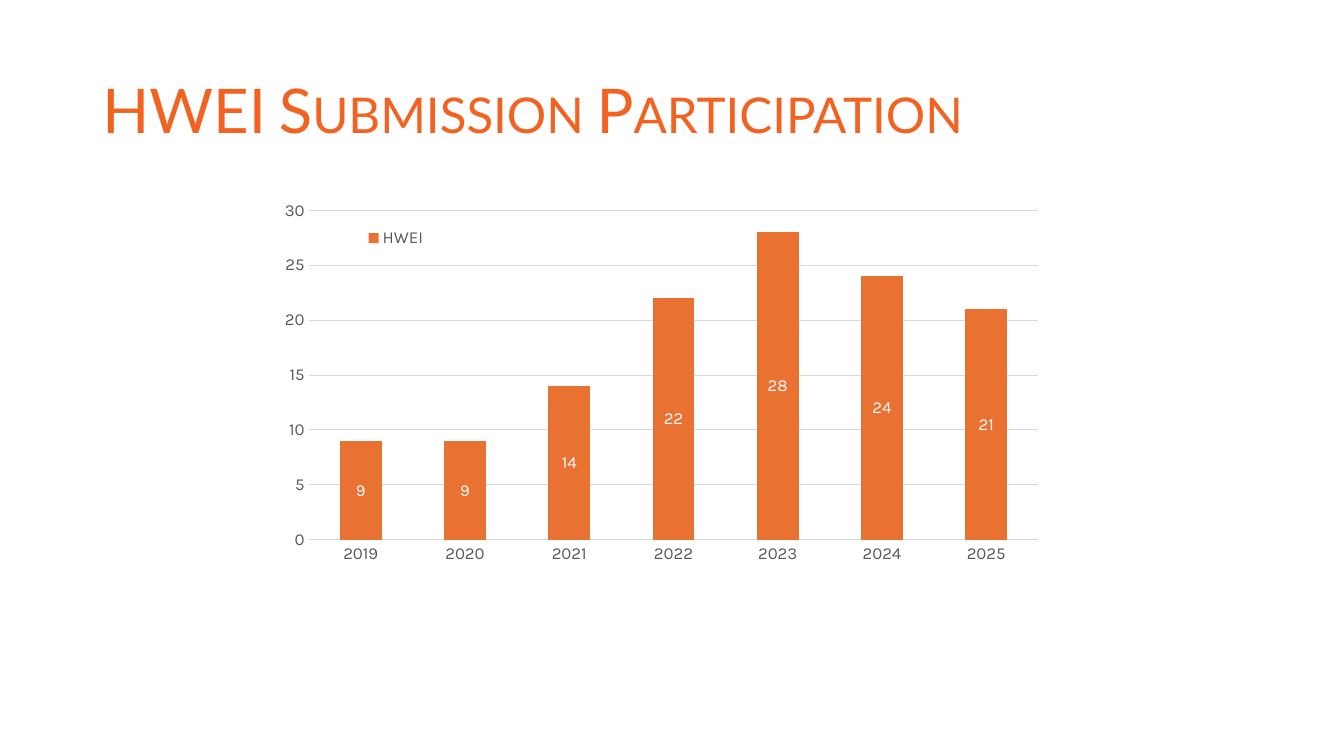
from dataclasses import dataclass

from lxml.etree import SubElement
from pptx import Presentation
from pptx.chart.data import CategoryChartData
from pptx.dml.color import RGBColor
from pptx.enum.chart import (XL_CHART_TYPE, XL_LABEL_POSITION,
                             XL_LEGEND_POSITION, XL_TICK_MARK)
from pptx.enum.text import MSO_ANCHOR, MSO_AUTO_SIZE, PP_ALIGN
from pptx.oxml.ns import qn
from pptx.util import Pt


@dataclass(frozen=True)
class Theme:
    title: str = "F26322"
    bar: str = "E97132"
    text: str = "595959"
    grid: str = "D9D9D9"
    white: str = "FFFFFF"
    head: str = "Lato"
    body: str = "Karla"
    big: int = 44
    small: int = 12


THEME = Theme()
COUNTS = {"2019": 9, "2020": 9, "2021": 14, "2022": 22,
          "2023": 28, "2024": 24, "2025": 21}


def style(font, size=THEME.small, color=THEME.text, name=THEME.body):
    font.size = Pt(size)
    font.name = name
    font.bold = False
    font.color.rgb = RGBColor.from_string(color)


def write(frame, text, align=PP_ALIGN.LEFT, space=1.0, caps=None, **form):
    para = frame.paragraphs[0]
    para.alignment = align
    para.line_spacing = space
    run = para.add_run()
    run.text = text
    style(run.font, **form)
    if caps:
        run._r.get_or_add_rPr().set("cap", caps)


def place(shape, left, top, width, height):
    shape.left, shape.top = Pt(left), Pt(top)
    shape.width, shape.height = Pt(width), Pt(height)


def rule(line):
    line.color.rgb = RGBColor.from_string(THEME.grid)
    line.width = Pt(0.75)


def lay_out(part, index, x, y, w, h, inner=False):
    """Fix a chart part at fractions of the chart area."""
    for old in part.findall(qn("c:layout")):
        part.remove(old)
    layout = part.makeelement(qn("c:layout"))
    part.insert(index, layout)
    manual = SubElement(layout, qn("c:manualLayout"))
    items = [("layoutTarget", "inner")] if inner else []
    items += [("xMode", "edge"), ("yMode", "edge"),
              ("x", x), ("y", y), ("w", w), ("h", h)]
    for tag, val in items:
        SubElement(manual, qn(f"c:{tag}")).set("val", str(val))


def add_title(slide, text):
    title = slide.shapes.title
    place(title, 66, 28.75, 828, 104.4)
    frame = title.text_frame
    frame.word_wrap = True
    frame.auto_size = MSO_AUTO_SIZE.NONE
    frame.vertical_anchor = MSO_ANCHOR.MIDDLE
    write(frame, text, space=0.9, caps="small", size=THEME.big,
          color=THEME.title, name=THEME.head)


def set_axes(chart):
    years, scale = chart.category_axis, chart.value_axis
    for axis in (years, scale):
        axis.major_tick_mark = axis.minor_tick_mark = XL_TICK_MARK.NONE
        style(axis.tick_labels.font)
    rule(years.format.line)
    scale.format.line.fill.background()
    scale.minimum_scale, scale.maximum_scale, scale.major_unit = 0, 30, 5
    scale.has_major_gridlines = True
    rule(scale.major_gridlines.format.line)
    scale.tick_labels.number_format = "0"
    scale.tick_labels.number_format_is_linked = False


def set_bars(plot):
    plot.gap_width, plot.overlap = 150, 100
    plot.vary_by_categories = False
    series = plot.series[0]
    series.format.fill.solid()
    series.format.fill.fore_color.rgb = RGBColor.from_string(THEME.bar)
    labels = series.data_labels
    labels.show_value = True
    labels.position = XL_LABEL_POSITION.CENTER
    style(labels.font, color=THEME.white)


def add_bars(slide, name, counts):
    data = CategoryChartData(number_format="0")
    data.categories = list(counts)
    data.add_series(name, list(counts.values()))
    chart = slide.shapes.add_chart(
        XL_CHART_TYPE.COLUMN_STACKED, Pt(186.5), Pt(133.2),
        Pt(566.6), Pt(283.7), data).chart
    chart.has_title = False
    style(chart.font)
    set_axes(chart)
    set_bars(chart.plots[0])
    # Legend sits inside the plot, at upper left
    chart.has_legend = True
    legend = chart.legend
    legend.position = XL_LEGEND_POSITION.BOTTOM
    legend.include_in_layout = False
    style(legend.font)
    lay_out(legend._element, 1, 0.12, 0.09, 0.1, 0.08)
    area = chart._chartSpace.chart.plotArea
    lay_out(area, 0, 0.06, 0.06, 0.92, 0.83, inner=True)


def main():
    deck = Presentation()
    deck.slide_width, deck.slide_height = Pt(960), Pt(540)
    slide = deck.slides.add_slide(deck.slide_layouts[5])
    add_title(slide, "HWEI Submission Participation")
    add_bars(slide, "HWEI", COUNTS)
    deck.save("out.pptx")


if __name__ == "__main__":
    main()
